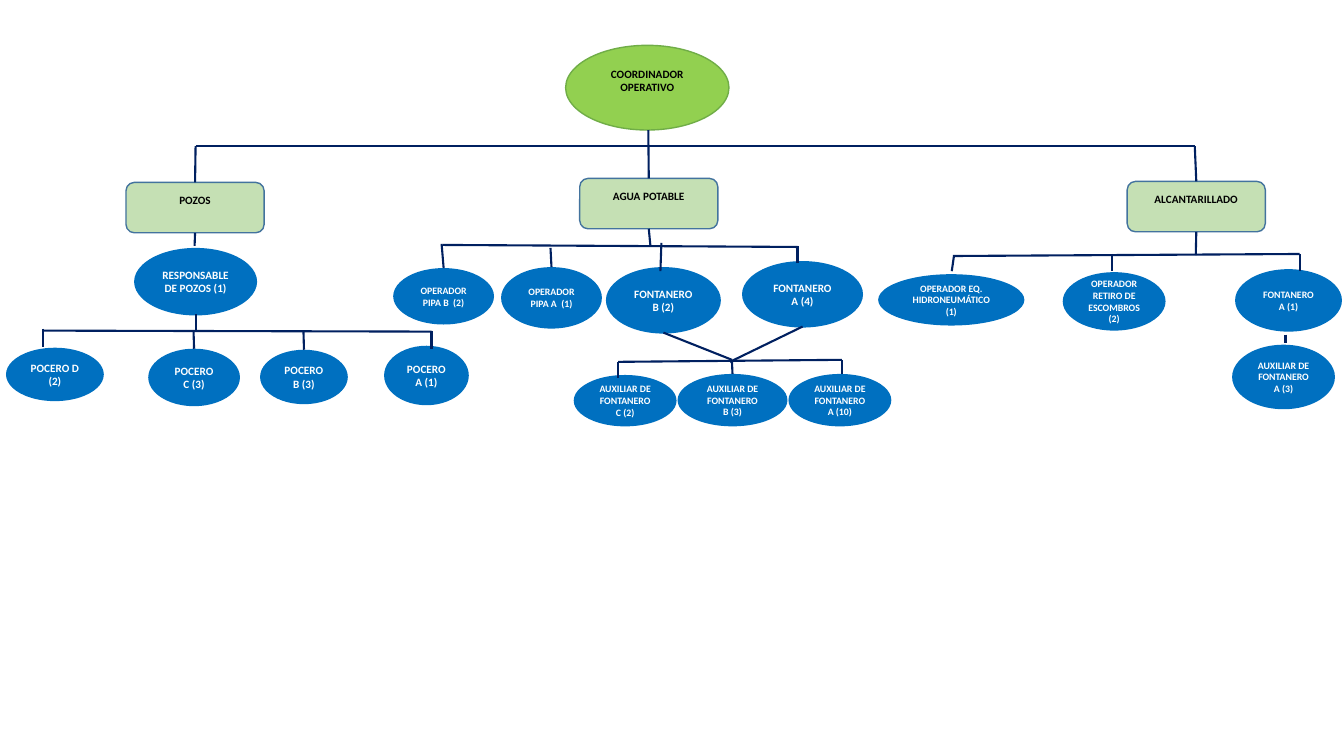
from lxml.etree import SubElement
from pptx import Presentation
from pptx.dml.color import RGBColor
from pptx.enum.shapes import MSO_CONNECTOR, MSO_SHAPE
from pptx.enum.text import MSO_ANCHOR, PP_ALIGN
from pptx.oxml.ns import qn
from pptx.util import Inches, Pt

COLUMNS, ROWS = 133.3, 75
CELL = Inches(0.1)
TOP, BOTTOM = 0, 2

NAVY = RGBColor(0x00, 0x20, 0x60)
BLUE = RGBColor(0x00, 0x70, 0xC0)
STEEL = RGBColor(0x43, 0x73, 0x9E)
LIME = RGBColor(0x92, 0xD0, 0x50)
GREEN = RGBColor(0x70, 0xAD, 0x47)
PALE_GREEN = RGBColor(0xC5, 0xE0, 0xB4)
WHITE = RGBColor(0xFF, 0xFF, 0xFF)
BLACK = RGBColor(0x00, 0x00, 0x00)

DEPARTMENTS = [
    ("POZOS", 12.5, 18.1),
    ("AGUA POTABLE", 57.5, 17.7),
    ("ALCANTARILLADO", 111.8, 18),
]

POSTS = [
    ("RESPONSABLE DE POZOS (1)", 13.3, 24.6, 12.2, 6.7, 8),
    ("POCERO D (2)", 0.6, 34.5, 9.7, 5.3, 8),
    ("POCERO C (3)", 14.7, 34.6, 9.1, 5.7, 8),
    ("POCERO B (3)", 25.8, 34.7, 8.7, 5.4, 8),
    ("POCERO A (1)", 38.1, 34.3, 8.4, 5.9, 8),
    ("OPERADOR PIPA B  (2)", 39, 26.6, 10, 5.6, 7),
    ("OPERADOR PIPA A  (1)", 49.7, 26.5, 10, 6.1, 7),
    ("FONTANERO B (2)", 60.1, 26.5, 11.4, 6.6, 8),
    ("FONTANERO A (4)", 73.6, 25.9, 12, 6.6, 8),
    ("AUXILIAR DE FONTANERO C (2)", 56.9, 37.2, 10.2, 5.1, 7),
    ("AUXILIAR DE FONTANERO B (3)", 67.2, 37.1, 10.9, 5.2, 7),
    ("AUXILIAR DE FONTANERO A (10)", 78.2, 37.1, 10.2, 5.2, 7),
    ("OPERADOR EQ. HIDRONEUMÁTICO (1)", 87.1, 27.2, 14.5, 5.1, 7),
    ("OPERADOR RETIRO DE ESCOMBROS (2)", 105.4, 27, 10.2, 5.8, 7),
    ("FONTANERO A (1)", 122.5, 26.7, 10.6, 6.2, 7),
    ("AUXILIAR DE FONTANERO A (3)", 122.2, 34.2, 10.2, 6.4, 7),
]

JOINED_LINES = [
    ("POZOS", TOP, 19.4, 14.5),
    ("POZOS", BOTTOM, 19.3, 24.4),
    ("AGUA POTABLE", TOP, 64.3, 12.9),
    ("AGUA POTABLE", BOTTOM, 64.5, 24.3),
    ("ALCANTARILLADO", TOP, 118.5, 14.5),
    ("ALCANTARILLADO", BOTTOM, 118.6, 25.3),
    ("POCERO C (3)", TOP, 19.2, 32.9),
    ("POCERO B (3)", TOP, 30.1, 32.9),
    ("OPERADOR PIPA B  (2)", TOP, 43.8, 24.2),
    ("OPERADOR PIPA A  (1)", TOP, 54.6, 24.6),
    ("AUXILIAR DE FONTANERO B (3)", TOP, 72.6, 35.9),
]

FREE_LINES = [
    (19.4, 14.5, 118.5, 14.5),
    (43.9, 24.3, 79.1, 24.5),
    (128.9, 25.2, 94.5, 25.4),
    (42.8, 32.9, 4.3, 32.8),
    (83.5, 35.7, 61.3, 35.9),
    (19.4, 31.2, 19.4, 32.8),
    (4.3, 32.6, 4.3, 34.4),
    (42.8, 32.8, 42.8, 34.6),
    (65.6, 24.1, 65.5, 26.9),
    (79.1, 24.4, 79.1, 26.1),
    (79.6, 32.4, 72.4, 35.9),
    (65.8, 33, 72.6, 35.7),
    (61.3, 35.9, 61.3, 37.5),
    (83.5, 35.7, 83.5, 37.1),
    (94.6, 25.5, 94.4, 26.9),
    (110.3, 25.2, 110.3, 26.9),
    (128.9, 25.2, 128.9, 26.9),
    (127.5, 33.2, 127.5, 34),
]


def grid(*cells):
    """Turn grid cells into slide lengths."""
    return [round(cell * CELL) for cell in cells]


def add_node(slide, preset, label, box, size, fill, outline, ink, lift=0):
    """Add a labelled node, its text raised by a deeper bottom inset."""
    node = slide.shapes.add_shape(preset, *grid(*box))
    node.shadow.inherit = False
    node.fill.solid()
    node.fill.fore_color.rgb = fill
    if outline is None:
        node.line.fill.background()
    else:
        node.line.color.rgb = outline
        node.line.width = Pt(1)
    frame = node.text_frame
    frame.word_wrap = True
    frame.vertical_anchor = MSO_ANCHOR.MIDDLE
    frame.margin_bottom = Inches(0.05 + lift)
    frame.text = label
    for paragraph in frame.paragraphs:
        paragraph.alignment = PP_ALIGN.CENTER
        font = paragraph.runs[0].font
        font.name, font.size, font.bold = "Calibri", Pt(size), True
        font.color.rgb = ink
    return node


def add_link(slide, x1, y1, x2, y2):
    """Add a navy line between two grid points."""
    link = slide.shapes.add_connector(MSO_CONNECTOR.STRAIGHT, *grid(x1, y1, x2, y2))
    link.line.color.rgb = NAVY
    link.line.width = Pt(1.5)
    SubElement(link._element.spPr, qn("a:effectLst"))
    return link


def main():
    """Build the operations organisation chart."""
    deck = Presentation()
    deck.slide_width, deck.slide_height = grid(COLUMNS, ROWS)
    slide = deck.slides.add_slide(deck.slide_layouts[6])

    add_node(slide, MSO_SHAPE.OVAL, "COORDINADOR\nOPERATIVO", (56.1, 4.5, 16.2, 8.4),
             8, LIME, GREEN, BLACK, lift=0.14)
    nodes = {}
    for label, left, top in DEPARTMENTS:
        nodes[label] = add_node(slide, MSO_SHAPE.ROUNDED_RECTANGLE, label,
                                (left, top, 13.7, 5), 8, PALE_GREEN, STEEL, BLACK, lift=0.14)
    for label, *box, size in POSTS:
        nodes[label] = add_node(slide, MSO_SHAPE.OVAL, label, box, size, BLUE, None, WHITE)

    for label, side, x, y in JOINED_LINES:
        add_link(slide, x, y, x, y).end_connect(nodes[label], side)
    for ends in FREE_LINES:
        add_link(slide, *ends)

    deck.save("out.pptx")


if __name__ == "__main__":
    main()
